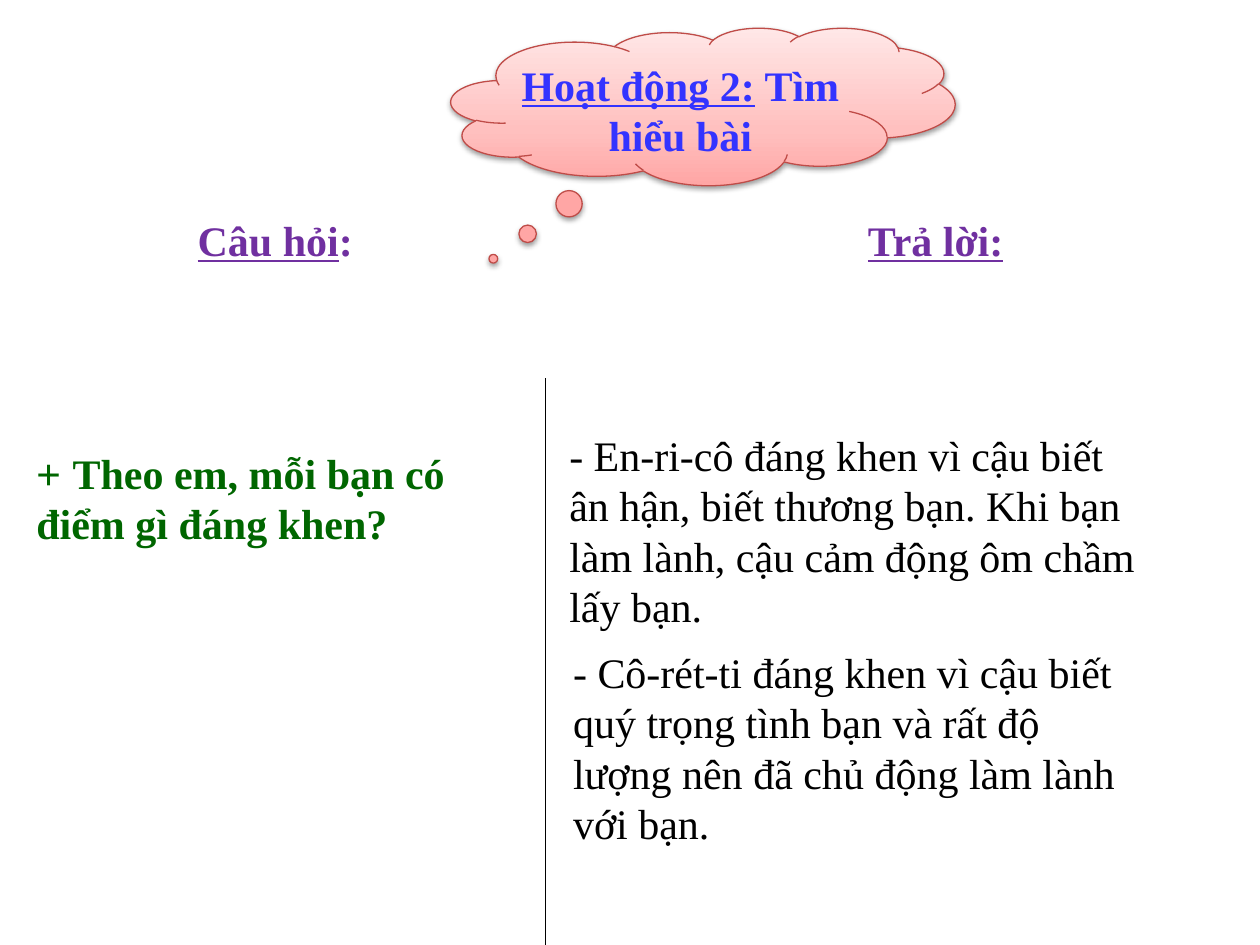
from lxml import etree
from pptx import Presentation
from pptx.dml.color import RGBColor
from pptx.enum import shapes, text
from pptx.oxml import parse_xml
from pptx.oxml.ns import nsdecls, qn
from pptx.util import Inches, Pt

COLORS = {
    "ink": "000000",
    "question": "006600",
    "title": "3333FF",
    "heading": "7030A0",
    "cloud_line": "BF4C48",
}
CLOUD_STOPS = [(0, "FFA6A5"), (35, "FFC0BF"), (100, "FFE7E7")]


def rgb(name):
    return RGBColor.from_string(COLORS[name])


class LessonSlide:
    """Holds the page and the text style shared by all its elements."""

    font_name = "Times New Roman"
    font_size = Pt(24)
    line_width = Pt(0.75)

    def __init__(self, deck):
        self.page = deck.slides.add_slide(deck.slide_layouts[5])

    def fill_text(self, box, spans, color, bold=False):
        """Fill the box with one paragraph of (wording, underline) spans."""
        frame = box.text_frame
        frame.word_wrap = True
        para = frame.paragraphs[0]
        para.font.name = self.font_name
        para.font.size = self.font_size
        para.font.bold = bold
        para.font.color.rgb = rgb(color)
        for wording, underline in spans:
            span = para.add_run()
            span.text = wording
            if underline:
                span.font.underline = True
        return para

    def text(self, left, top, width, height, spans, color, bold=False):
        box = self.page.shapes.add_textbox(
            Inches(left), Inches(top), Inches(width), Inches(height))
        return self.fill_text(box, spans, color, bold)

    def title(self, left, top, width, height, spans):
        box = self.page.shapes.title
        box.left, box.top = Inches(left), Inches(top)
        box.width, box.height = Inches(width), Inches(height)
        para = self.fill_text(box, spans, "title", bold=True)
        para.alignment = text.PP_ALIGN.CENTER
        box.text_frame.auto_size = text.MSO_AUTO_SIZE.NONE
        box.text_frame.vertical_anchor = text.MSO_ANCHOR.MIDDLE
        # Bring the title in front of the cloud
        self.page.shapes._spTree.append(box._element)

    def divider(self, x, top, bottom):
        line = self.page.shapes.add_connector(
            shapes.MSO_CONNECTOR.STRAIGHT,
            Inches(x), Inches(top), Inches(x), Inches(bottom))
        line.line.color.rgb = rgb("ink")
        line.line.width = self.line_width
        etree.SubElement(line._element.spPr, qn("a:effectLst"))

    def cloud(self, left, top, width, height, tail):
        """Add a thought cloud with a vertical gradient and a soft shadow."""
        cloud = self.page.shapes.add_shape(
            shapes.MSO_SHAPE.CLOUD_CALLOUT,
            Inches(left), Inches(top), Inches(width), Inches(height))
        for index, value in enumerate(tail):
            cloud.adjustments[index] = value
        cloud.line.color.rgb = rgb("cloud_line")
        cloud.line.width = self.line_width
        stops = "".join(
            f'<a:gs pos="{pos * 1000}"><a:srgbClr val="{color}"/></a:gs>'
            for pos, color in CLOUD_STOPS)
        properties = cloud._element.spPr
        properties.find(qn("a:prstGeom")).addnext(parse_xml(
            f'<a:gradFill {nsdecls("a")} rotWithShape="1"><a:gsLst>{stops}</a:gsLst>'
            '<a:lin ang="16200000" scaled="0"/></a:gradFill>'))
        cloud.shadow.inherit = False
        properties.find(qn("a:effectLst")).append(parse_xml(
            f'<a:outerShdw {nsdecls("a")} blurRad="{Pt(3.1)}" dist="{Pt(1.6)}" '
            'dir="5400000" rotWithShape="0"><a:srgbClr val="000000">'
            '<a:alpha val="38000"/></a:srgbClr></a:outerShdw>'))


def main():
    deck = Presentation()
    deck.slide_width, deck.slide_height = Inches(10), Inches(7.5)
    slide = LessonSlide(deck)

    slide.divider(4.33, 3, 7.5)
    slide.cloud(3.58, 0.22, 4, 1.25, tail=(-0.416, 0.967))
    slide.title(3.95, 0.37, 2.9, 1, [("Hoạt động 2:", True), (" Tìm hiểu bài", False)])

    slide.text(1.47, 1.65, 2, 0.5, [("Câu hỏi", True), (":", False)], "heading", bold=True)
    slide.text(6.79, 1.65, 2, 0.5, [("Trả lời:", True)], "heading", bold=True)

    question = slide.text(0.19, 3.5, 4.08, 0.91, [
        ("+ ", False),
        ("Theo em, mỗi bạn có điểm gì đáng khen?", False),
    ], "question", bold=True)
    plus = question.runs[0]
    plus.font.name = "Arial"
    plus.font.bold = False

    answers = [
        (4.42, 3.36, "- En-ri-cô đáng khen vì cậu biết ân hận, biết thương bạn. "
                     "Khi bạn làm lành, cậu cảm động ôm chầm lấy bạn."),
        (4.45, 5.08, "- Cô-rét-ti đáng khen vì cậu biết quý trọng tình bạn và rất độ "
                     "lượng nên đã chủ động làm lành với bạn."),
    ]
    for left, top, answer in answers:
        slide.text(left, top, 4.76, 1.72, [(answer, False)], "ink")

    deck.save("out.pptx")


if __name__ == "__main__":
    main()
